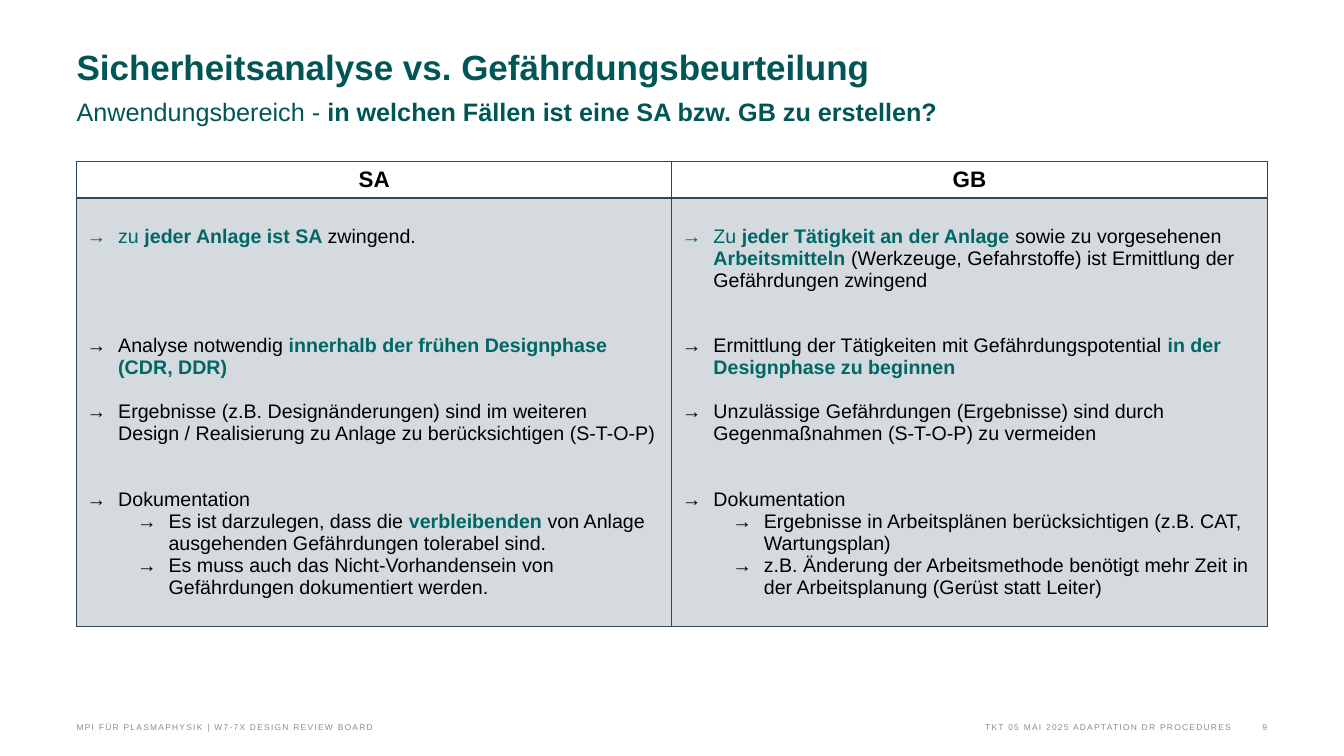
from dataclasses import dataclass
from typing import NamedTuple

from lxml import etree
from pptx import Presentation
from pptx.dml.color import RGBColor
from pptx.enum.text import MSO_ANCHOR, PP_ALIGN
from pptx.oxml.ns import qn
from pptx.util import Pt

LEFT, CENTER, RIGHT = PP_ALIGN.LEFT, PP_ALIGN.CENTER, PP_ALIGN.RIGHT
TOP, MIDDLE, BOTTOM = MSO_ANCHOR.TOP, MSO_ANCHOR.MIDDLE, MSO_ANCHOR.BOTTOM

COLORS = {"title": "005555", "accent": "006666", "text": "000000",
          "footer": "8C8C8C", "navy": "29485D"}
FONT = "Arial"
MARGIN_LEFT, CONTENT_WIDTH = 54.7, 850.4
BODY_SIZE, LINE_HEIGHT = 14, 15.65
CELL_MARGIN_Y = 3.6
INDENT, LEVEL_STEP = 22.5, 36


class Span(NamedTuple):
    text: str
    color: str = "text"
    bold: bool = False


@dataclass
class Bullet:
    spans: list[Span]
    gap_lines: int = 0
    level: int = 0


@dataclass
class Column:
    heading: str
    bullets: list[Bullet]


@dataclass
class Footer:
    text: str
    left: float
    width: float
    align: PP_ALIGN


def accent(text: str) -> Span:
    return Span(text, "accent", True)


COLUMNS = [
    Column("SA", [
        Bullet([Span("zu ", "accent"), accent("jeder Anlage ist SA "), Span("zwingend.")]),
        Bullet([Span("Analyse notwendig "),
                accent("innerhalb der frühen Designphase (CDR, DDR)")], 4),
        Bullet([Span("Ergebnisse (z.B. Designänderungen) sind im weiteren Design / "
                     "Realisierung zu Anlage zu berücksichtigen (S-T-O-P)")], 1),
        Bullet([Span("Dokumentation")], 2),
        Bullet([Span("Es ist darzulegen, dass die "), accent("verbleibenden"),
                Span(" von Anlage ausgehenden Gefährdungen tolerabel sind.")], level=1),
        Bullet([Span("Es muss auch das Nicht-Vorhandensein von Gefährdungen "
                     "dokumentiert werden.")], level=1),
    ]),
    Column("GB", [
        Bullet([Span("Zu ", "accent"), accent("jeder Tätigkeit an der Anlage "),
                Span("sowie zu vorgesehenen "), accent("Arbeitsmitteln"),
                Span(" (Werkzeuge, Gefahrstoffe) ist Ermittlung der Gefährdungen zwingend")]),
        Bullet([Span("Ermittlung der Tätigkeiten mit Gefährdungspotential "),
                accent("in der Designphase zu beginnen")], 2),
        Bullet([Span("Unzulässige Gefährdungen (Ergebnisse) sind durch "
                     "Gegenmaßnahmen (S-T-O-P) zu vermeiden")], 1),
        Bullet([Span("Dokumentation")], 2),
        Bullet([Span("Ergebnisse in Arbeitsplänen berücksichtigen (z.B. CAT, "
                     "Wartungsplan)")], level=1),
        Bullet([Span("z.B. Änderung der Arbeitsmethode benötigt mehr Zeit in der "
                     "Arbeitsplanung (Gerüst statt Leiter)")], level=1),
    ]),
]

FOOTERS = [
    Footer("MPI FÜR PLASMAPHYSIK | W7-7X DESIGN REVIEW BOARD", MARGIN_LEFT, 479.5, LEFT),
    Footer("TKT 05 MAI 2025 ADAPTATION DR PROCEDURES", 324.7, 554.4, RIGHT),
    Footer("9", 879.1, 26, RIGHT),
]


def apply_format(target, values: dict) -> None:
    for name, value in values.items():
        setattr(target, name, value)


def add_span(paragraph, span: Span, size: float):
    run = paragraph.add_run()
    run.text = span.text
    apply_format(run.font, {"name": FONT, "size": Pt(size), "bold": span.bold})
    run.font.color.rgb = RGBColor.from_string(COLORS[span.color])
    return run


def add_text_frame(slide, left: float, top: float, width: float, height: float, anchor):
    frame = slide.shapes.add_textbox(Pt(left), Pt(top), Pt(width), Pt(height)).text_frame
    apply_format(frame, {"margin_left": 0, "margin_top": 0, "margin_right": 0,
                         "margin_bottom": 0, "word_wrap": True,
                         "vertical_anchor": anchor})
    return frame


def set_borders(cell, bottom: float = 1) -> None:
    properties = cell._tc.get_or_add_tcPr()
    for side, width in {"lnL": 1, "lnR": 1, "lnT": 1, "lnB": bottom}.items():
        line = etree.SubElement(properties, qn(f"a:{side}"), w=str(Pt(width)))
        fill = etree.SubElement(line, qn("a:solidFill"))
        etree.SubElement(fill, qn("a:srgbClr"), val=COLORS["navy"])


def add_bullet(paragraph, bullet: Bullet) -> None:
    properties = paragraph._p.get_or_add_pPr()
    properties.set("marL", str(Pt(INDENT + bullet.level * LEVEL_STEP)))
    properties.set("indent", str(Pt(-INDENT)))
    etree.SubElement(properties, qn("a:buFont"), typeface=FONT)
    etree.SubElement(properties, qn("a:buChar"), char="→")
    paragraph.level = bullet.level
    if bullet.gap_lines:
        paragraph.space_before = Pt(bullet.gap_lines * LINE_HEIGHT)
    for span in bullet.spans:
        add_span(paragraph, span, BODY_SIZE)


def fill_heading(cell, heading: str) -> None:
    set_borders(cell, bottom=2)
    cell.fill.background()
    apply_format(cell, {"vertical_anchor": MIDDLE, "margin_top": Pt(CELL_MARGIN_Y),
                        "margin_bottom": Pt(CELL_MARGIN_Y)})
    paragraph = cell.text_frame.paragraphs[0]
    paragraph.alignment = CENTER
    add_span(paragraph, Span(heading, bold=True), 16)


def fill_body(cell, bullets: list[Bullet]) -> None:
    set_borders(cell)
    cell.fill.solid()
    cell.fill.fore_color.rgb = RGBColor.from_string(COLORS["navy"])
    color = cell._tc.tcPr.find(f"{qn('a:solidFill')}/{qn('a:srgbClr')}")
    etree.SubElement(color, qn("a:alpha"), val="20000")
    apply_format(cell, {"vertical_anchor": TOP, "margin_bottom": Pt(CELL_MARGIN_Y),
                        "margin_top": Pt(CELL_MARGIN_Y + LINE_HEIGHT)})
    frame = cell.text_frame
    for index, bullet in enumerate(bullets):
        add_bullet(frame.add_paragraph() if index else frame.paragraphs[0], bullet)


def add_title(slide) -> None:
    title = add_text_frame(slide, MARGIN_LEFT, 34.6, 753.8, 70.6, TOP).paragraphs[0]
    apply_format(title, {"line_spacing": Pt(28), "space_after": Pt(18)})
    add_span(title, Span("Sicherheitsanalyse vs. Gefährdungsbeurteilung", "title", True), 25)
    title.add_line_break()
    add_span(title, Span("Anwendungsbereich - ", "title"), 18)
    add_span(title, Span("in welchen Fällen ist eine SA bzw. GB zu erstellen?",
                         "title", True), 18)


def add_comparison(slide) -> None:
    table = slide.shapes.add_table(2, len(COLUMNS), Pt(MARGIN_LEFT), Pt(115.2),
                                   Pt(CONTENT_WIDTH), Pt(331)).table
    apply_format(table, {"first_row": False, "horz_banding": False})
    for row, height in zip(table.rows, (25, 306)):
        row.height = Pt(height)
    for index, column in enumerate(COLUMNS):
        table.columns[index].width = Pt(CONTENT_WIDTH / len(COLUMNS))
        fill_heading(table.cell(0, index), column.heading)
        fill_body(table.cell(1, index), column.bullets)


def add_footer(slide, footer: Footer) -> None:
    frame = add_text_frame(slide, footer.left, 511.2, footer.width, 11.5, BOTTOM)
    paragraph = frame.paragraphs[0]
    paragraph.alignment = footer.align
    run = add_span(paragraph, Span(footer.text, "footer"), 6)
    run._r.get_or_add_rPr().set("spc", "90")


def main() -> None:
    deck = Presentation()
    apply_format(deck, {"slide_width": Pt(960), "slide_height": Pt(540)})
    slide = deck.slides.add_slide(deck.slide_layouts[6])

    # Title and subtitle
    add_title(slide)
    # Comparison of SA and GB
    add_comparison(slide)
    # Footer line
    for footer in FOOTERS:
        add_footer(slide, footer)

    deck.save("out.pptx")


if __name__ == "__main__":
    main()
